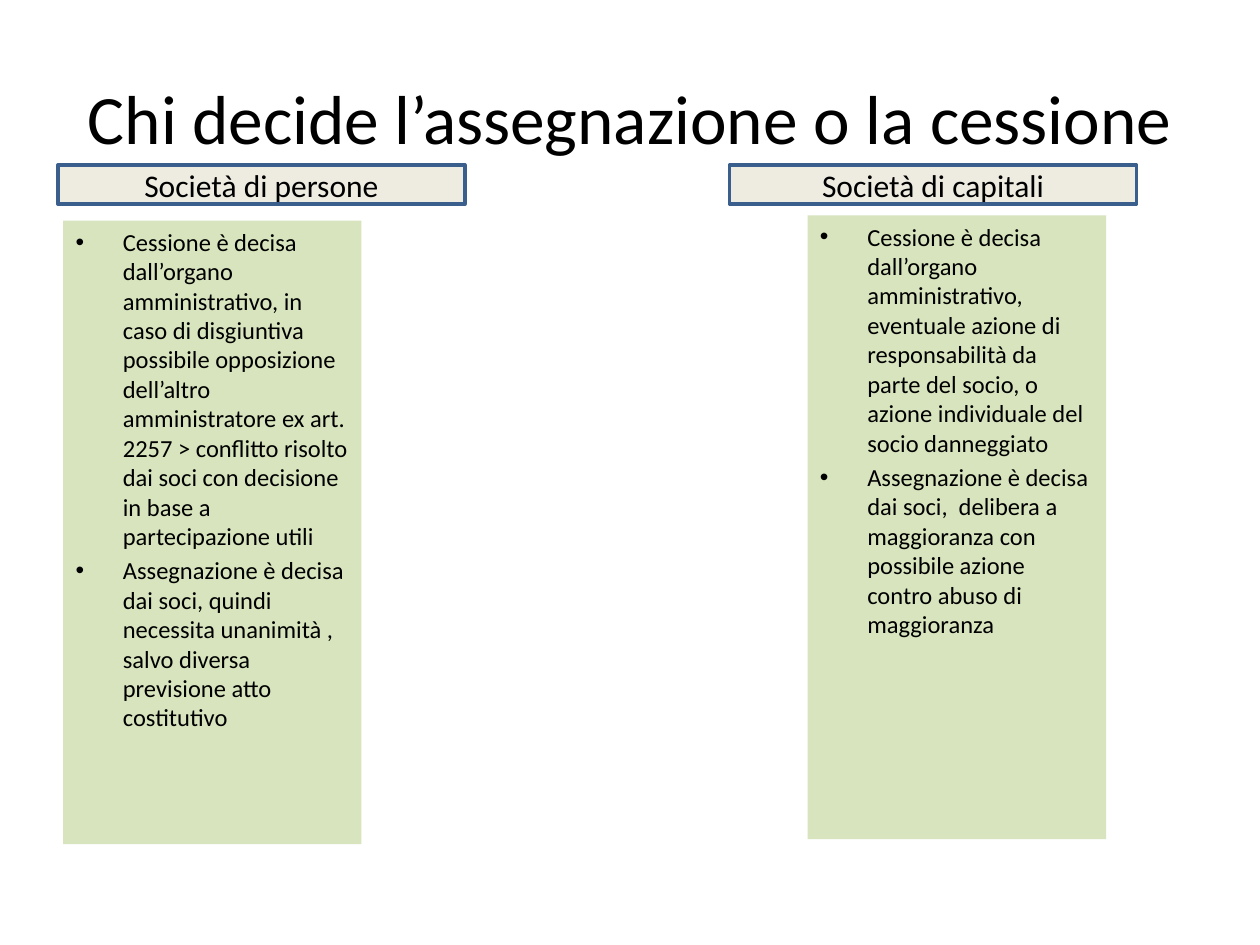
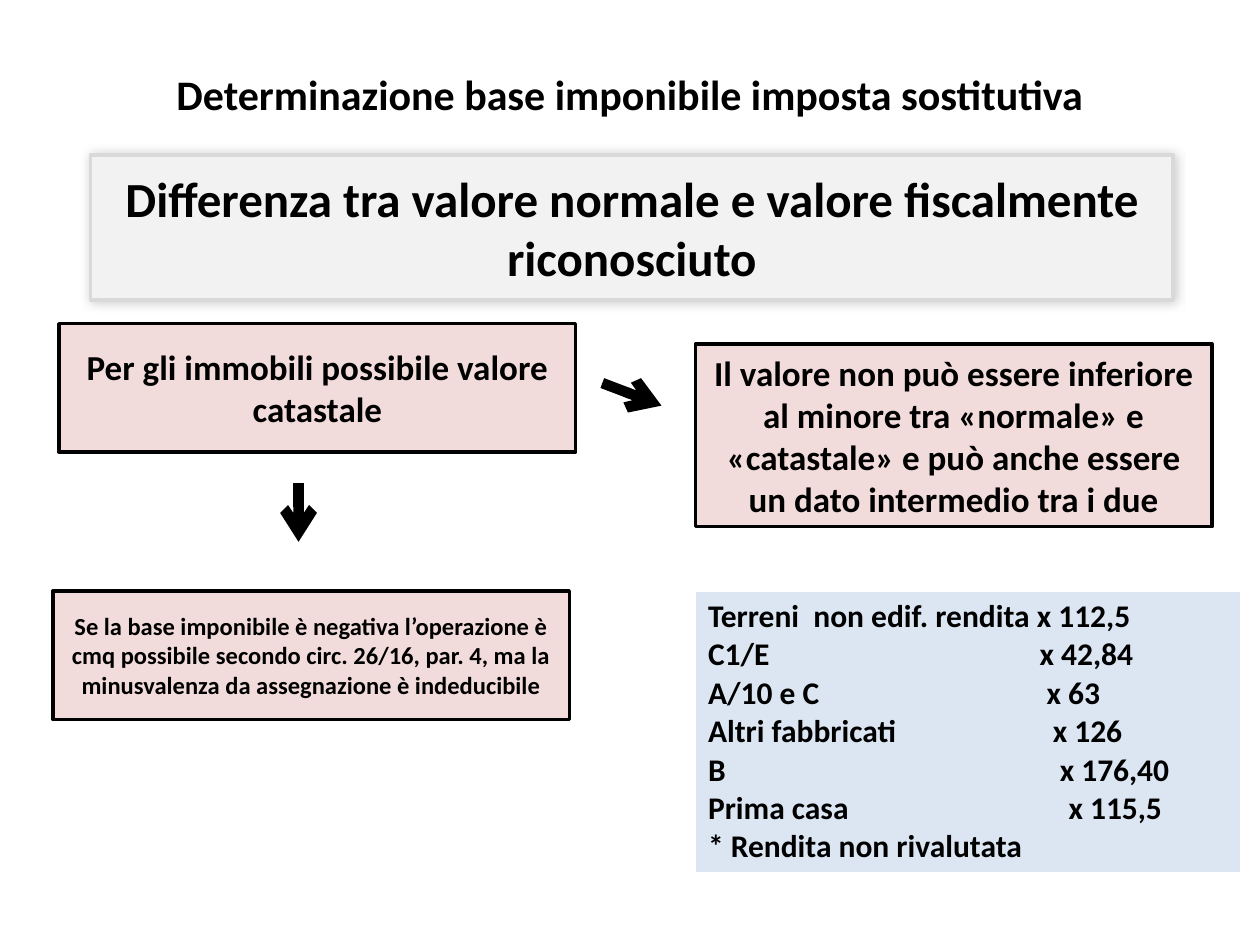
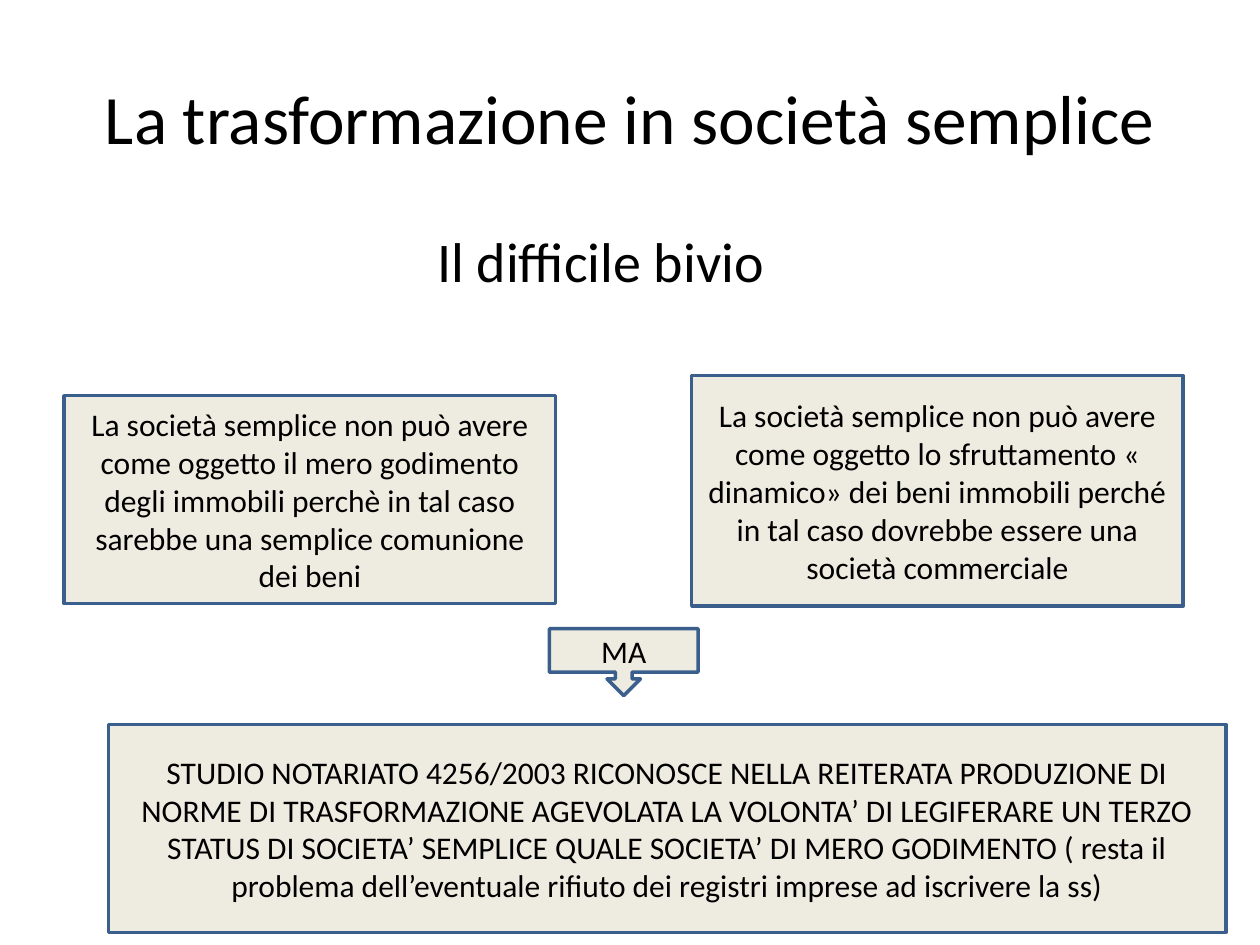
import dataclasses

import pptx
import pptx.dml.color
import pptx.enum.shapes
import pptx.enum.text
import pptx.oxml.ns
import pptx.util
from lxml import etree

Pt = pptx.util.Pt
Shapes = pptx.enum.shapes.MSO_SHAPE
Align = pptx.enum.text.PP_ALIGN
Anchor = pptx.enum.text.MSO_ANCHOR
TITLE_AND_CONTENT, TITLE_ONLY = 1, 5


@dataclasses.dataclass(frozen=True)
class Theme:
    font: str = "Calibri"
    text: str = "000000"
    blue: str = "3A5F8C"
    cream: str = "EEECE1"
    green: str = "D7E4BD"
    pink: str = "F2DCDB"
    pale_blue: str = "DCE6F2"
    light_grey: str = "F2F2F2"
    grey: str = "D9D9D9"
    title: float = 39.6
    subtitle: float = 32
    band: float = 28
    small_title: float = 24
    statement: float = 20
    label: float = 18
    body: float = 14
    outline: float = 2
    arrow: float = 6
    bullet_indent: float = 27


THEME = Theme()
TITLE_AREA = (36, 21.6, 648, 90)


def rgb(color):
    return pptx.dml.color.RGBColor.from_string(color)


def add_xml(parent, tag, **attributes):
    values = {name: str(value) for name, value in attributes.items()}
    return etree.SubElement(parent, pptx.oxml.ns.qn(tag), values)


def set_bullet(paragraph, bullet):
    """Show a hanging bullet, or remove the inherited one when it is empty."""
    properties = paragraph._p.get_or_add_pPr()
    indent = Pt(THEME.bullet_indent) if bullet else 0
    properties.set("marL", str(indent))
    properties.set("indent", str(-indent))
    if bullet:
        add_xml(properties, "a:buFont", typeface="Arial")
        add_xml(properties, "a:buChar", char=bullet)
    else:
        add_xml(properties, "a:buNone")


def set_tab_stop(paragraph, position):
    tabs = add_xml(paragraph._p.get_or_add_pPr(), "a:tabLst")
    add_xml(tabs, "a:tab", pos=Pt(position), algn="l")


def write_text(frame, *texts, size, bold=False, align=Align.CENTER,
               anchor=Anchor.MIDDLE, bullet=None, spacing=0):
    """Write one paragraph per text; spacing is a share of the type size."""
    frame.word_wrap = True
    frame.auto_size = pptx.enum.text.MSO_AUTO_SIZE.NONE
    frame.vertical_anchor = anchor
    for index, text in enumerate(texts):
        paragraph = frame.paragraphs[0] if index == 0 else frame.add_paragraph()
        paragraph.alignment = align
        paragraph.space_before = Pt(size * spacing)
        if bullet is not None:
            set_bullet(paragraph, bullet)
        run = paragraph.add_run()
        run.text = text
        run.font.name = THEME.font
        run.font.size = Pt(size)
        run.font.bold = bold
        run.font.color.rgb = rgb(THEME.text)


def place(shape, area):
    shape.left, shape.top, shape.width, shape.height = map(Pt, area)


def paint(shape, color):
    shape.fill.solid()
    shape.fill.fore_color.rgb = rgb(color)


def add_slide(presentation, layout, title, area=TITLE_AREA, **text_format):
    slide = presentation.slides.add_slide(presentation.slide_layouts[layout])
    place(slide.shapes.title, area)
    write_text(slide.shapes.title.text_frame, title,
               **{"size": THEME.title, **text_format})
    return slide


def add_box(slide, area, *texts, fill=THEME.cream, line=THEME.blue,
            kind=Shapes.RECTANGLE, **text_format):
    shape = slide.shapes.add_shape(kind, *map(Pt, area))
    shape.shadow.inherit = False
    paint(shape, fill)
    if line:
        shape.line.color.rgb = rgb(line)
        shape.line.width = Pt(THEME.outline)
    else:
        shape.line.fill.background()
    write_text(shape.text_frame, *texts, **{"size": THEME.label, **text_format})
    return shape


def add_pink_box(slide, area, text, size=THEME.statement):
    add_box(slide, area, text, fill=THEME.pink, line=THEME.text, size=size, bold=True)


def add_glow_shadow(shape):
    effects = shape._element.spPr.find(pptx.oxml.ns.qn("a:effectLst"))
    shadow = add_xml(effects, "a:outerShdw", blurRad=Pt(6), dist=0,
                     dir=225 * 60000, algn="ctr", rotWithShape=0)
    add_xml(add_xml(shadow, "a:srgbClr", val=THEME.text), "a:alpha", val=20000)


def add_arrow(slide, start, end):
    connector = slide.shapes.add_connector(
        pptx.enum.shapes.MSO_CONNECTOR.STRAIGHT, *map(Pt, start + end))
    connector.line.color.rgb = rgb(THEME.text)
    connector.line.width = Pt(THEME.arrow)
    add_xml(connector.line._get_or_add_ln(), "a:tailEnd", type="arrow")
    add_xml(connector._element.spPr, "a:effectLst")


def add_multiplier_table(slide, area, rows):
    """Fill a one-cell table from (text, tab stop or None) rows."""
    table = slide.shapes.add_table(1, 1, *map(Pt, area)).table
    cell = table.cell(0, 0)
    paint(cell, THEME.pale_blue)
    write_text(cell.text_frame, *(text for text, _ in rows), size=THEME.label,
               bold=True, align=Align.LEFT, anchor=Anchor.TOP)
    for paragraph, (_, tab_stop) in zip(cell.text_frame.paragraphs, rows):
        if tab_stop:
            set_tab_stop(paragraph, tab_stop)


def build_decision_slide(presentation):
    slide = add_slide(presentation, TITLE_AND_CONTENT,
                      "Chi decide l’assegnazione o la cessione")
    list_format = dict(size=THEME.body, align=Align.LEFT, anchor=Anchor.TOP,
                       bullet="•", spacing=0.2)
    partnerships = slide.placeholders[1]
    place(partnerships, (36, 126, 170.6, 356.4))
    paint(partnerships, THEME.green)
    write_text(
        partnerships.text_frame,
        "Cessione è decisa dall’organo amministrativo, in caso di disgiuntiva "
        "possibile opposizione dell’altro amministratore ex art. 2257 > conflitto "
        "risolto dai soci con decisione in base a partecipazione utili",
        "Assegnazione è decisa dai soci, quindi necessita unanimità , salvo "
        "diversa previsione atto costitutivo",
        **list_format)
    for left, heading in ((33.1, "Società di persone"), (416.9, "Società di capitali")):
        add_box(slide, (left, 94.3, 232.6, 22.3), heading)
    add_box(
        slide, (461.5, 123.1, 170.6, 356.4),
        "Cessione è decisa dall’organo amministrativo, eventuale azione di "
        "responsabilità da parte del socio, o azione individuale del socio danneggiato",
        "Assegnazione è decisa dai soci,  delibera a maggioranza con possibile "
        "azione contro abuso di maggioranza",
        fill=THEME.green, line=None, **list_format)


def build_tax_base_slide(presentation):
    slide = add_slide(presentation, TITLE_ONLY,
                      "Determinazione base imponibile imposta sostitutiva",
                      area=(0, 31.7, 720, 43.2), size=THEME.small_title, bold=True)
    band = add_box(slide, (51.8, 88.6, 618.5, 82.8),
                   "Differenza tra valore normale e valore fiscalmente riconosciuto",
                   fill=THEME.light_grey, line=THEME.grey, size=THEME.band, bold=True)
    add_glow_shadow(band)
    add_pink_box(slide, (33.8, 185, 295.2, 73.4),
                 "Per gli immobili possibile valore catastale")
    add_arrow(slide, (170.6, 275.8), (170.6, 309.6))
    add_pink_box(slide, (30.2, 337.7, 295.2, 73.4),
                 "Se la base imponibile è negativa l’operazione è cmq possibile "
                 "secondo circ. 26/16, par. 4, ma la minusvalenza da assegnazione "
                 "è indeducibile", size=THEME.body)
    add_arrow(slide, (344.2, 218.9), (378, 231.8))
    add_pink_box(slide, (397.4, 196.6, 295.2, 104.4),
                 "Il valore non può essere inferiore al minore tra «normale» e "
                 "«catastale» e può anche essere un dato intermedio tra i due")
    add_multiplier_table(slide, (397.4, 337.7, 311.8, 158.4), (
        ("Terreni  non edif. rendita x 112,5", None),
        ("C1/E\tx 42,84", 189.5),
        ("A/10 e C\tx 63", 193.5),
        ("Altri fabbricati\tx 126", 197),
        ("B\tx 176,40", 201),
        ("Prima casa\tx 115,5", 206),
        ("* Rendita non rivalutata", None),
    ))


def build_transformation_slide(presentation):
    slide = add_slide(presentation, TITLE_AND_CONTENT,
                      "La trasformazione in società semplice")
    subtitle = slide.placeholders[1]
    place(subtitle, (242.6, 126, 247, 89.3))
    write_text(subtitle.text_frame, "Il difficile bivio", size=THEME.subtitle,
               align=Align.LEFT, anchor=Anchor.TOP, bullet="", spacing=0.2)
    add_box(slide, (36.7, 226.1, 280.8, 118.8),
            "La società semplice non può avere come oggetto il mero godimento degli "
            "immobili perchè in tal caso sarebbe una semplice comunione dei beni")
    add_box(slide, (395.3, 214.6, 280.8, 131.8),
            "La società semplice non può avere come oggetto lo sfruttamento « "
            "dinamico» dei beni immobili perché in tal caso dovrebbe essere una "
            "società commerciale")
    add_box(slide, (313.9, 359.3, 85, 38.2), "MA", kind=Shapes.DOWN_ARROW_CALLOUT)
    add_box(slide, (61.9, 414, 638.6, 118.8),
            "STUDIO NOTARIATO 4256/2003 RICONOSCE NELLA REITERATA PRODUZIONE DI "
            "NORME DI TRASFORMAZIONE AGEVOLATA LA VOLONTA’ DI LEGIFERARE UN TERZO "
            "STATUS DI SOCIETA’ SEMPLICE QUALE SOCIETA’ DI MERO GODIMENTO ( resta il "
            "problema dell’eventuale rifiuto dei registri imprese ad iscrivere la ss)")


def main():
    presentation = pptx.Presentation()
    presentation.slide_width = Pt(720)
    presentation.slide_height = Pt(540)
    build_decision_slide(presentation)
    build_tax_base_slide(presentation)
    build_transformation_slide(presentation)
    presentation.save("out.pptx")


if __name__ == "__main__":
    main()
